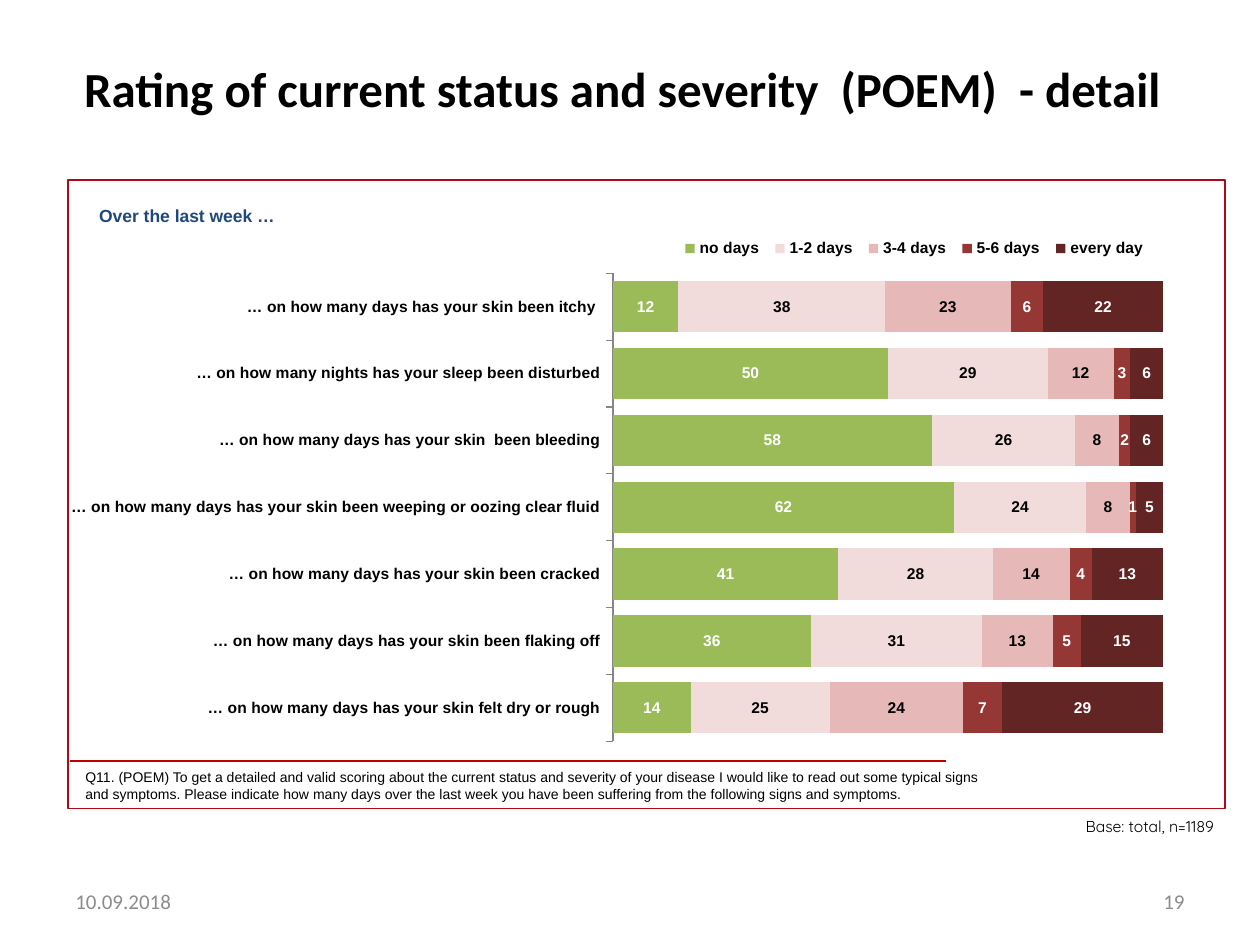
from lxml import etree
from pptx import Presentation
from pptx.chart.data import CategoryChartData
from pptx.dml.color import RGBColor
from pptx.enum.chart import XL_CHART_TYPE as ChartType
from pptx.enum.chart import XL_LABEL_POSITION as LabelPosition
from pptx.enum.chart import XL_LEGEND_POSITION as LegendPosition
from pptx.enum.chart import XL_TICK_MARK as TickMark
from pptx.enum.shapes import MSO_CONNECTOR as Connector
from pptx.enum.shapes import MSO_SHAPE as Shape
from pptx.enum.text import MSO_ANCHOR as Anchor
from pptx.enum.text import PP_ALIGN as Align
from pptx.oxml.ns import qn
from pptx.util import Cm, Pt

QUESTIONS = {
    "… on how many days has your skin been itchy ": (12, 38, 23, 6, 22),
    "… on how many nights has your sleep been disturbed": (50, 29, 12, 3, 6),
    "… on how many days has your skin  been bleeding": (58, 26, 8, 2, 6),
    "… on how many days has your skin been weeping or oozing clear fluid": (62, 24, 8, 1, 5),
    "… on how many days has your skin been cracked": (41, 28, 14, 4, 13),
    "… on how many days has your skin been flaking off": (36, 31, 13, 5, 15),
    "… on how many days has your skin felt dry or rough": (14, 25, 24, 7, 29),
}
# Answer, bar colour, label colour
ANSWERS = [
    ("no days", "9BBB59", "FFFFFF"),
    ("1-2 days", "F2DCDB", "000000"),
    ("3-4 days", "E6B9B8", "000000"),
    ("5-6 days", "953735", "FFFFFF"),
    ("every day", "632523", "FFFFFF"),
]
FOOTNOTE = (
    "Q11. (POEM) To get a detailed and valid scoring about the current status and "
    "severity of your disease I would like to read out some typical signs and symptoms. "
    "Please indicate how many days over the last week you have been suffering from the "
    "following signs and symptoms."
)


def color(hex_string):
    return RGBColor.from_string(hex_string)


def set_layout(parent, index, inner=False, **fractions):
    """Place a chart part by fractions of the chart area."""
    for old in parent.findall(qn("c:layout")):
        parent.remove(old)
    layout = etree.Element(qn("c:layout"))
    manual = etree.SubElement(layout, qn("c:manualLayout"))
    settings = {"layoutTarget": "inner"} if inner else {}
    settings.update(xMode="edge", yMode="edge", **fractions)
    for name, value in settings.items():
        etree.SubElement(manual, qn(f"c:{name}")).set("val", str(value))
    parent.insert(index, layout)


class SlideBuilder:
    font = "Arial"
    black = "000000"
    gray = "8C8C8C"

    def __init__(self, presentation):
        self.slide = presentation.slides.add_slide(presentation.slide_layouts[5])

    def style(self, font, size, hex_string=black, bold=False, name=font):
        font.name, font.size, font.bold = name, Pt(size), bold
        font.color.rgb = color(hex_string)

    def title(self, box, text):
        shape = self.slide.shapes.title
        shape.left, shape.top, shape.width, shape.height = map(Cm, box)
        frame = shape.text_frame
        frame.text = text
        frame.vertical_anchor = Anchor.MIDDLE
        paragraph = frame.paragraphs[0]
        paragraph.alignment = Align.CENTER
        self.style(paragraph.runs[0].font, 28, bold=True, name="Calibri")

    def text(self, box, text, size, align=Align.LEFT, anchor=Anchor.TOP,
             margins=(0.25, 0.13), **style):
        frame = self.slide.shapes.add_textbox(*map(Cm, box)).text_frame
        frame.word_wrap = True
        frame.vertical_anchor = anchor
        frame.margin_left = frame.margin_right = Cm(margins[0])
        frame.margin_top = frame.margin_bottom = Cm(margins[1])
        frame.text = text
        paragraph = frame.paragraphs[0]
        paragraph.alignment = align
        self.style(paragraph.runs[0].font, size, **style)

    def frame(self, box, hex_string):
        shape = self.slide.shapes.add_shape(Shape.RECTANGLE, *map(Cm, box))
        shape.shadow.inherit = False
        shape.fill.background()
        shape.line.color.rgb = color(hex_string)
        shape.line.width = Pt(1)

    def line(self, start, end, hex_string):
        line = self.slide.shapes.add_connector(Connector.STRAIGHT, *map(Cm, start + end))
        line.line.color.rgb = color(hex_string)
        line.line.width = Pt(0.75)
        etree.SubElement(line._element.spPr, qn("a:effectLst"))

    def chart(self, box, questions, answers):
        data = CategoryChartData()
        data.categories = list(questions)
        for (name, *_), values in zip(answers, zip(*questions.values())):
            data.add_series(name, values)
        chart = self.slide.shapes.add_chart(
            ChartType.BAR_STACKED_100, *map(Cm, box), data).chart
        self.style(chart.font, 8.9, bold=True)
        chart.has_title = False

        # Bars and their labels
        plot = chart.plots[0]
        plot.gap_width, plot.overlap = 30, 100
        plot.vary_by_categories = False
        for series, (_, fill, label) in zip(plot.series, answers):
            series.format.fill.solid()
            series.format.fill.fore_color.rgb = color(fill)
            labels = series.data_labels
            labels.show_value = True
            labels.position = LabelPosition.CENTER
            self.style(labels.font, 8.9, label, bold=True)

        # Axes
        categories = chart.category_axis
        categories.reverse_order = True
        categories.major_tick_mark = TickMark.OUTSIDE
        categories.format.line.color.rgb = color("868686")
        chart.value_axis.has_major_gridlines = False
        chart.value_axis.visible = False

        # Legend and plot positions
        chart.has_legend = True
        chart.legend.position = LegendPosition.TOP
        chart.legend.include_in_layout = False
        set_layout(chart.legend._element, 1, x=0.55, y=0.03, w=0.43, h=0.06)
        plot_area = chart._chartSpace.chart.plotArea
        set_layout(plot_area, 0, inner=True, x=0.495, y=0.107, w=0.493, h=0.884)


def main():
    presentation = Presentation()
    presentation.slide_width, presentation.slide_height = Cm(25.4), Cm(19.05)
    builder = SlideBuilder(presentation)
    builder.title((1.24, 1.07, 22.6, 1.42),
                  "Rating of current status and severity  (POEM)  - detail")

    # Framed chart
    builder.chart((1.22, 4.37, 22.5, 10.67), QUESTIONS, ANSWERS)
    builder.frame((1.37, 3.63, 23.32, 12.67), "AE0917")
    builder.text((1.75, 4.01, 7.8, 0.69), "Over the last week …", 10,
                 hex_string="1F497D", bold=True)

    # Question wording and base
    builder.text((1.42, 15.34, 19.08, 0.99), FOOTNOTE, 8, margins=(0.3, 0.15))
    builder.line((1.42, 15.34), (19.08, 15.34), "C00000")
    builder.text((19.51, 16.31, 5.26, 0.69), "Base: total, n=1189", 9,
                 align=Align.RIGHT, margins=(0.3, 0.15), name="Quicksand")

    # Footer
    for left, text, align in ((1.27, "10.09.2018", Align.LEFT), (18.21, "19", Align.RIGHT)):
        builder.text((left, 17.65, 5.92, 1.02), text, 12, align=align,
                     anchor=Anchor.MIDDLE, hex_string=builder.gray, name="Calibri")

    presentation.save("out.pptx")


if __name__ == "__main__":
    main()
